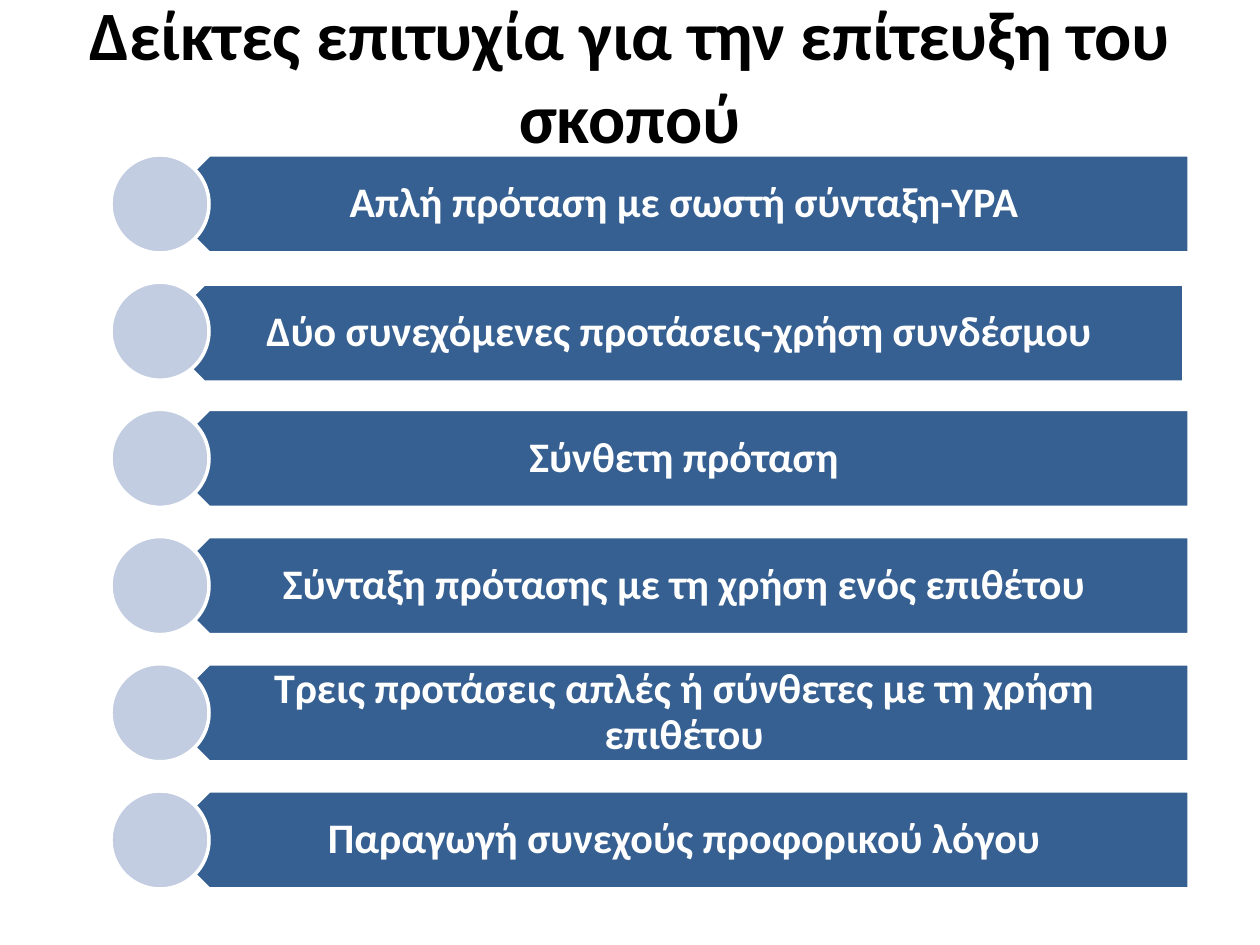
"""Builds a slide listing six success indicators as arrow bars with round markers."""
from pptx import Presentation
from pptx.dml.color import RGBColor
from pptx.enum.shapes import MSO_SHAPE
from pptx.enum.text import MSO_ANCHOR, PP_ALIGN
from pptx.util import Pt

PENTAGON, OVAL = MSO_SHAPE.PENTAGON, MSO_SHAPE.OVAL
MIDDLE, CENTER = MSO_ANCHOR.MIDDLE, PP_ALIGN.CENTER

TITLE = "Δείκτες επιτυχία για την επίτευξη του σκοπού"
INDICATORS = [
    ("Απλή πρόταση με σωστή σύνταξη-ΥΡΑ", (0, 0)),
    ("Δύο συνεχόμενες προτάσεις-χρήση συνδέσμου", (-5, 2)),
    ("Σύνθετη πρόταση", (0, 0)),
    ("Σύνταξη πρότασης με τη χρήση ενός επιθέτου", (0, 0)),
    ("Τρεις προτάσεις απλές ή σύνθετες με τη χρήση επιθέτου", (0, 0)),
    ("Παραγωγή συνεχούς προφορικού λόγου", (0, 0)),
]
COLORS = {"title": "000000", "bar": "376092", "marker": "C2CDE1", "white": "FFFFFF"}
FONT = "Calibri"

FIRST_TOP, LAST_TOP = 155, 791
BAR_LEFT, BAR_WIDTH, BAR_HEIGHT = 160, 1029, 98
MARKER_LEFT = 111


def px(n):
    return round(n * 914400 / 126)


def color(name):
    return RGBColor.from_string(COLORS[name])


def write(sp, text, size, name, insets):
    tf = sp.text_frame
    tf.text = text
    tf.word_wrap = True
    tf.vertical_anchor = MIDDLE
    tf.margin_left, tf.margin_top, tf.margin_right, tf.margin_bottom = map(px, insets)
    p = tf.paragraphs[0]
    p.alignment = CENTER
    font = p.runs[0].font
    font.name, font.size, font.bold = FONT, Pt(size), True
    font.color.rgb = color(name)
    return p


def add_shape(s, kind, box, fill):
    sp = s.shapes.add_shape(kind, *map(px, box))
    sp.shadow.inherit = False
    sp.fill.solid()
    sp.fill.fore_color.rgb = color(fill)
    sp.line.color.rgb = color("white")
    sp.line.width = Pt(2)
    return sp


def main():
    prs = Presentation()
    prs.slide_width, prs.slide_height = px(1260), px(945)
    s = prs.slides.add_slide(prs.slide_layouts[5])

    title = s.shapes.title
    title.left, title.top, title.width, title.height = map(px, (63, 38, 1134, 157))
    write(title, TITLE, 39.6, "title", (13, 6, 13, 90))

    step = (LAST_TOP - FIRST_TOP) / (len(INDICATORS) - 1)
    for i, (text, (dx, dy)) in enumerate(INDICATORS):
        top = FIRST_TOP + i * step
        box = (BAR_LEFT + dx, top + dy, BAR_WIDTH, BAR_HEIGHT)
        add_shape(s, PENTAGON, box, "bar").rotation = 180
        label = s.shapes.add_textbox(*map(px, box))
        write(label, text, 24, "white", (43, 13, 24, 13)).line_spacing = 0.9
        add_shape(s, OVAL, (MARKER_LEFT, top, BAR_HEIGHT, BAR_HEIGHT), "marker")

    prs.save("out.pptx")


if __name__ == "__main__":
    main()
